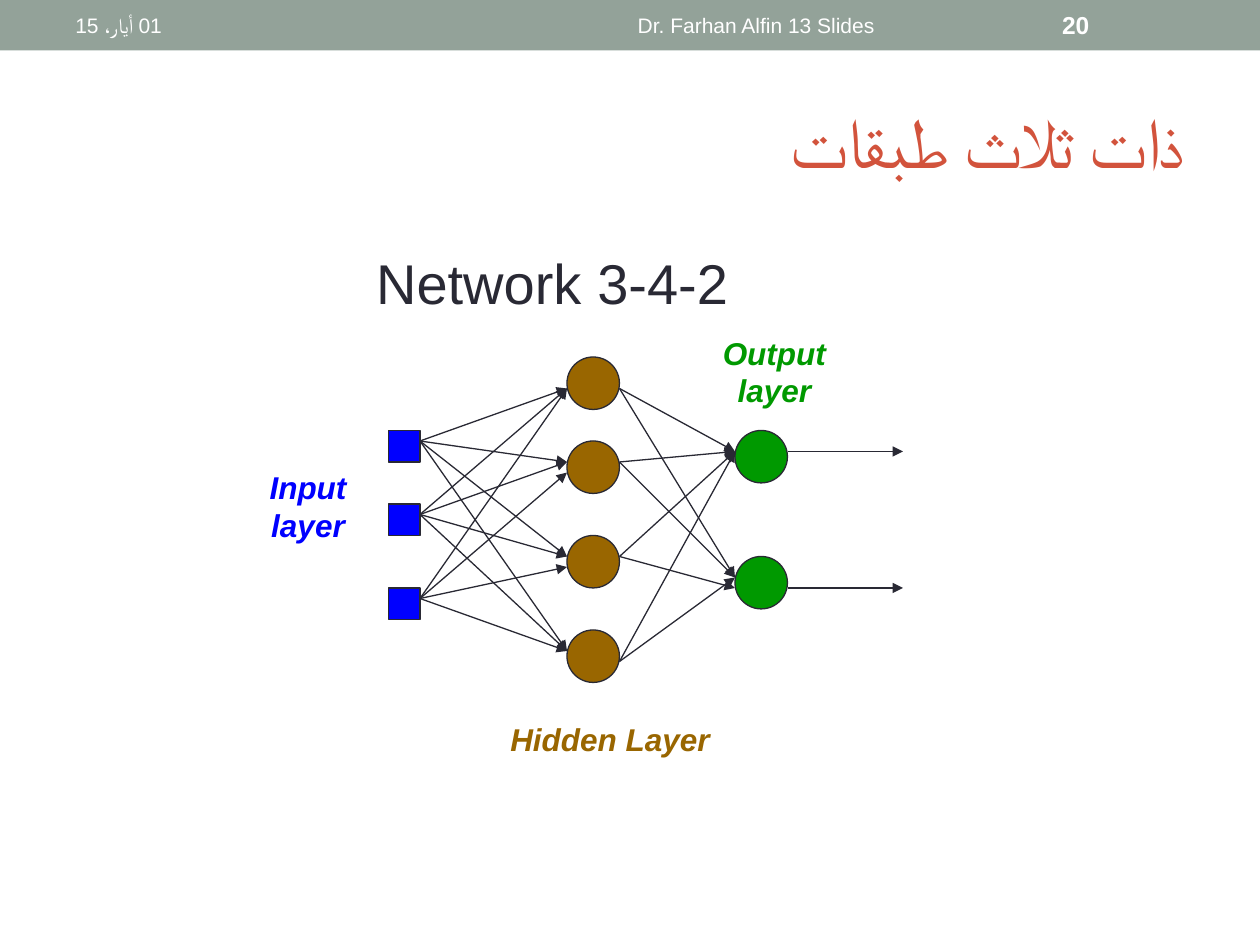
from itertools import product

from lxml.etree import SubElement
from pptx import Presentation
from pptx.dml.color import RGBColor
from pptx.enum.shapes import MSO_CONNECTOR, MSO_SHAPE
from pptx.enum.text import MSO_ANCHOR, MSO_AUTO_SIZE, PP_ALIGN
from pptx.oxml.ns import qn
from pptx.util import Cm, Pt

WHITE = RGBColor(0xFF, 0xFF, 0xFF)
SAGE = RGBColor(0x93, 0xA2, 0x99)
RED = RGBColor(0xD2, 0x53, 0x3C)
INK = RGBColor(0x29, 0x29, 0x34)
BLUE = RGBColor(0x00, 0x00, 0xFF)
GREEN = RGBColor(0x00, 0x99, 0x00)
BROWN = RGBColor(0x99, 0x66, 0x00)

GRID_STEP = 2.54 / 12
INPUT_LEFT, INPUT_SIZE = 37, 3
HIDDEN_LEFT, OUTPUT_LEFT, NEURON_SIZE = 54, 70, 5
ARROW_END = 86
INPUT_TOPS = [41, 48, 56]
HIDDEN_TOPS = [34, 42, 51, 60]
OUTPUT_TOPS = [41, 53]
INPUT_EXITS = [top + 1 for top in INPUT_TOPS]
HIDDEN_ENTRIES = [37, 44, 53, 62]
HIDDEN_EXITS = [37, 44, 53, 63]
OUTPUT_ENTRIES = [43, 55]
OUTPUT_EXITS = [43, 56]
LOWERED_ENTRIES = {(57, 44), (57, 53), (53, 55)}


def grid(steps):
    return Cm(steps * GRID_STEP)


class SlideBuilder:
    font_name = "Arial"
    line_width = Pt(0.75)

    def __init__(self, slide):
        self.slide = slide

    def add_lines(self, frame, lines, size, color, align, bold=False, italic=False, spacing=None):
        for index, line in enumerate(lines):
            paragraph = frame.add_paragraph() if index else frame.paragraphs[0]
            paragraph.alignment = align
            paragraph._p.get_or_add_pPr().set("rtl", "1")
            run = paragraph.add_run()
            run.text = line
            font = run.font
            font.name = self.font_name
            font.size = Pt(size)
            font.bold = bold
            font.italic = italic
            font.color.rgb = color
            properties = run._r.get_or_add_rPr()
            SubElement(properties, qn("a:cs")).set("typeface", self.font_name)
            if spacing is not None:
                properties.set("spc", str(spacing))

    def title(self, text, left, top, width, height):
        shape = self.slide.shapes.title
        shape.left, shape.top = Cm(left), Cm(top)
        shape.width, shape.height = Cm(width), Cm(height)
        shape.text_frame.vertical_anchor = MSO_ANCHOR.MIDDLE
        self.add_lines(shape.text_frame, [text], 40, RED, PP_ALIGN.RIGHT, spacing=-100)

    def header_text(self, text, left, width, align, size=12, bold=False):
        box = self.slide.shapes.add_textbox(Cm(left), Cm(0.05), Cm(width), Cm(0.91))
        box.text_frame.word_wrap = True
        box.text_frame.vertical_anchor = MSO_ANCHOR.MIDDLE
        self.add_lines(box.text_frame, [text], size, WHITE, align, bold)

    def label(self, lines, left, top, width, height, color, align,
              size=18, emphasis=True, wrap=False):
        box = self.slide.shapes.add_textbox(Cm(left), Cm(top), Cm(width), Cm(height))
        box.text_frame.word_wrap = wrap
        box.text_frame.auto_size = MSO_AUTO_SIZE.SHAPE_TO_FIT_TEXT
        self.add_lines(box.text_frame, lines, size, color, align, emphasis, emphasis)

    def header_bar(self):
        shape = self.slide.shapes.add_shape(MSO_SHAPE.RECTANGLE, 0, 0, Cm(25.4), Cm(1.02))
        shape.shadow.inherit = False
        shape.fill.solid()
        shape.fill.fore_color.rgb = SAGE
        shape.line.fill.background()

    def layer(self, kind, left, tops, size, color):
        for top in tops:
            shape = self.slide.shapes.add_shape(
                kind, grid(left), grid(top), grid(size), grid(size))
            shape.shadow.inherit = False
            shape.fill.solid()
            shape.fill.fore_color.rgb = color
            shape.line.color.rgb = INK
            shape.line.width = self.line_width

    def arrow(self, start_x, start_y, end_x, end_y):
        connector = self.slide.shapes.add_connector(
            MSO_CONNECTOR.STRAIGHT, grid(start_x), grid(start_y), grid(end_x), grid(end_y))
        connector.line.color.rgb = INK
        connector.line.width = self.line_width
        SubElement(connector.line._get_or_add_ln(), qn("a:tailEnd")).set("type", "triangle")
        SubElement(connector._element.spPr, qn("a:effectLst"))

    def connect_layers(self, start_x, exits, end_x, entries):
        for pair in product(exits, entries):
            exit_y, entry_y = pair
            self.arrow(start_x, exit_y, end_x, entry_y + (pair in LOWERED_ENTRIES))


def main():
    presentation = Presentation()
    presentation.slide_width, presentation.slide_height = Cm(25.4), Cm(19.05)
    slide = presentation.slides.add_slide(presentation.slide_layouts[5])
    builder = SlideBuilder(slide)

    builder.header_bar()
    builder.title("ذات ثلاث طبقات", 1.27, 1.47, 22.86, 2.74)
    builder.header_text("01 أيار، 15", 1.27, 8.05, PP_ALIGN.LEFT)
    builder.header_text("Dr. Farhan Alfin 13 Slides", 9.53, 11.43, PP_ALIGN.CENTER)
    builder.header_text("20", 21.16, 2.97, PP_ALIGN.LEFT, size=14, bold=True)

    builder.label(["Input", "layer"], 5.08, 9.32, 2.26, 1.8, BLUE, PP_ALIGN.CENTER, wrap=True)
    builder.label(["Output", "layer"], 13.97, 6.6, 3.28, 2.29, GREEN, PP_ALIGN.CENTER)
    builder.label(["Hidden Layer"], 8.69, 14.4, 5.87, 1.27, BROWN, PP_ALIGN.RIGHT)

    builder.layer(MSO_SHAPE.OVAL, HIDDEN_LEFT, HIDDEN_TOPS, NEURON_SIZE, BROWN)
    builder.layer(MSO_SHAPE.RECTANGLE, INPUT_LEFT, INPUT_TOPS, INPUT_SIZE, BLUE)
    builder.connect_layers(INPUT_LEFT + INPUT_SIZE, INPUT_EXITS, HIDDEN_LEFT, HIDDEN_ENTRIES)
    builder.layer(MSO_SHAPE.OVAL, OUTPUT_LEFT, OUTPUT_TOPS, NEURON_SIZE, GREEN)
    builder.connect_layers(HIDDEN_LEFT + NEURON_SIZE, HIDDEN_EXITS, OUTPUT_LEFT, OUTPUT_ENTRIES)
    for exit_y in OUTPUT_EXITS:
        builder.arrow(OUTPUT_LEFT + NEURON_SIZE, exit_y, ARROW_END, exit_y)

    builder.label(["3-4-2 Network"], 7.26, 4.88, 7.67, 1.63, INK, PP_ALIGN.RIGHT,
                  size=32, emphasis=False)
    presentation.save("out.pptx")


if __name__ == "__main__":
    main()
